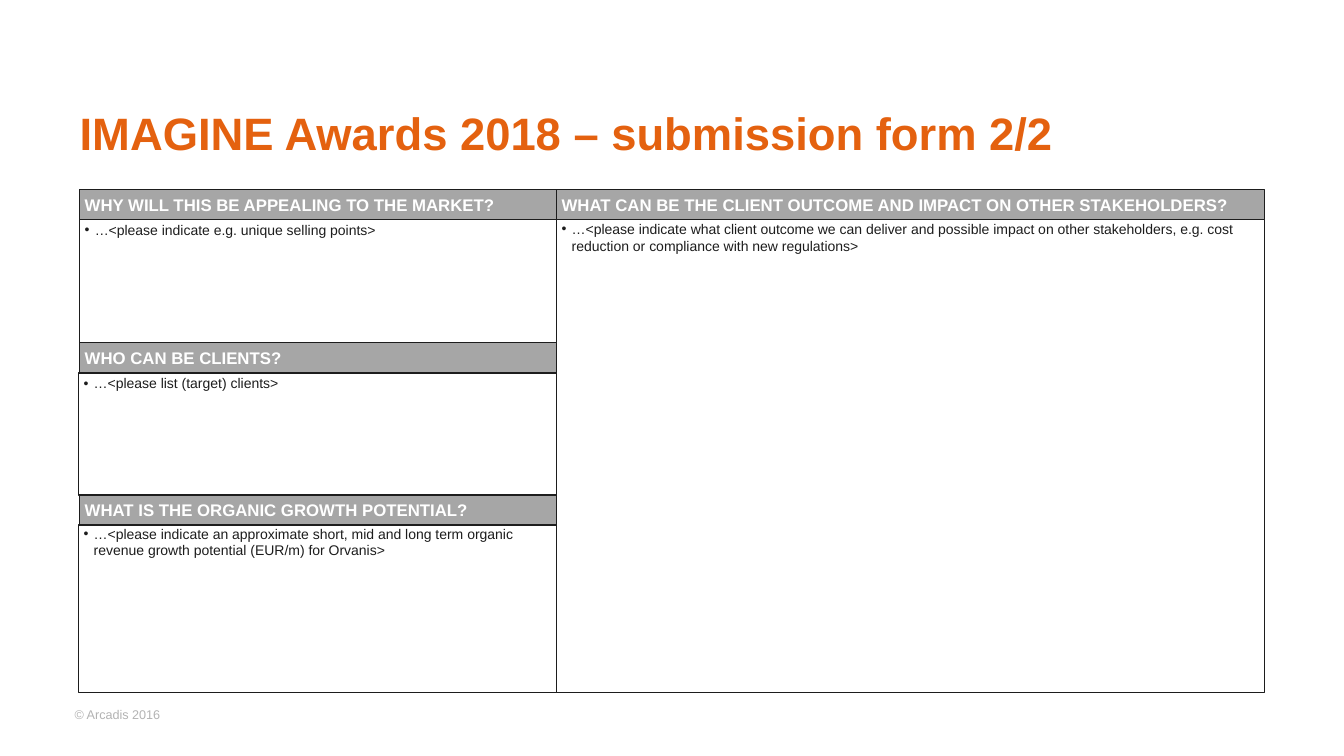
from dataclasses import dataclass

from lxml.etree import SubElement
from pptx import Presentation
from pptx.dml.color import RGBColor
from pptx.enum.shapes import MSO_SHAPE as Preset
from pptx.enum.text import MSO_ANCHOR as Anchor, MSO_AUTO_SIZE as AutoSize, PP_ALIGN as Align
from pptx.oxml.ns import qn
from pptx.util import Inches, Pt

INK = "1D1D1D"
WHITE = "FFFFFF"
GREY = "A6A6A6"
PALE_GREY = "B3B3B3"
ORANGE = "E4610F"

COLUMNS = (0.79, 5.52, 12.54)
ROWS = (1.88, 3.4, 4.91, 6.87)
HEADING_HEIGHT = 0.3
INSET = 0.05
BULLET_INDENT = 0.1


@dataclass(frozen=True)
class Question:
    heading: str
    hint: str
    column: int
    first_row: int
    last_row: int
    hint_height: float
    hint_rise: float
    outdent: float = 0


QUESTIONS = (
    Question("WHY WILL THIS BE APPEALING TO THE MARKET?",
             "…<please indicate e.g. unique selling points>",
             0, 0, 1, 0.35, 0.03),
    Question("WHO CAN BE CLIENTS?",
             "…<please list (target) clients>",
             0, 1, 2, 0.35, 0.03, 0.01),
    Question("WHAT CAN BE THE CLIENT OUTCOME AND IMPACT ON OTHER STAKEHOLDERS?",
             "…<please indicate what client outcome we can deliver and possible impact on "
             "other stakeholders, e.g. cost reduction or compliance with new regulations>",
             1, 0, 3, 0.52, 0.04),
    Question("WHAT IS THE ORGANIC GROWTH POTENTIAL?",
             "…<please indicate an approximate short, mid and long term organic revenue "
             "growth potential (EUR/m) for Orvanis>",
             0, 2, 3, 0.52, 0.05, 0.01),
)


def colour(code: str) -> RGBColor:
    return RGBColor.from_string(code)


def write(holder, text: str, *, size: float, ink: str, bold: bool = False,
          bullet: bool = False, inset: float = INSET, wrap: bool = True,
          anchor=Anchor.TOP, spacing: float = 1) -> None:
    frame = holder.text_frame
    frame.word_wrap = wrap
    frame.auto_size = AutoSize.NONE
    frame.vertical_anchor = anchor
    frame.margin_left = frame.margin_right = Inches(inset)
    frame.margin_top = frame.margin_bottom = Inches(inset)
    frame.text = text
    paragraph = frame.paragraphs[0]
    paragraph.alignment = Align.LEFT
    paragraph.line_spacing = spacing
    if bullet:
        properties = paragraph._p.get_or_add_pPr()
        properties.set("marL", str(Inches(BULLET_INDENT)))
        properties.set("indent", str(-Inches(BULLET_INDENT)))
        SubElement(properties, qn("a:buFont"), typeface="Arial")
        SubElement(properties, qn("a:buChar"), char="•")
    font = paragraph.runs[0].font
    font.name = "Arial"
    font.size = Pt(size)
    font.bold = bold
    font.color.rgb = colour(ink)


def add_panel(shapes, left: float, top: float, width: float, height: float, fill: str):
    panel = shapes.add_shape(Preset.RECTANGLE, Inches(left), Inches(top),
                             Inches(width), Inches(height))
    panel.shadow.inherit = False
    panel.fill.solid()
    panel.fill.fore_color.rgb = colour(fill)
    panel.line.color.rgb = colour(INK)
    panel.line.width = Pt(1)
    return panel


def add_question(slide, question: Question) -> None:
    left, right = COLUMNS[question.column:question.column + 2]
    top, bottom = ROWS[question.first_row], ROWS[question.last_row]
    answer_left = left - question.outdent
    answer_top = top + HEADING_HEIGHT
    answer_width = right - answer_left

    answer = slide.shapes.add_group_shape()
    add_panel(answer.shapes, answer_left, answer_top, answer_width, bottom - answer_top, WHITE)
    hint = answer.shapes.add_textbox(Inches(answer_left), Inches(answer_top - question.hint_rise),
                                     Inches(answer_width), Inches(question.hint_height))
    write(hint, question.hint, size=10, ink=INK, bullet=True)

    heading = add_panel(slide.shapes, left, top, right - left, HEADING_HEIGHT, GREY)
    write(heading, question.heading, size=12, ink=WHITE, bold=True)


def main() -> None:
    deck = Presentation()
    deck.slide_width, deck.slide_height = Inches(13.33), Inches(7.5)
    slide = deck.slides.add_slide(deck.slide_layouts[5])

    title = slide.shapes.title
    title.left, title.top = Inches(COLUMNS[0]), Inches(1.1)
    title.width, title.height = Inches(COLUMNS[-1] - COLUMNS[0]), Inches(0.69)
    write(title, "IMAGINE Awards 2018 – submission form 2/2",
          size=32.4, ink=ORANGE, bold=True, inset=0, spacing=0.9)

    for question in QUESTIONS:
        add_question(slide, question)

    copyright_line = slide.shapes.add_textbox(Inches(0.69), Inches(6.97), Inches(0.96), Inches(0.23))
    write(copyright_line, "© Arcadis 2016", size=9, ink=PALE_GREY, wrap=False, anchor=Anchor.MIDDLE)

    deck.save("out.pptx")


if __name__ == "__main__":
    main()
